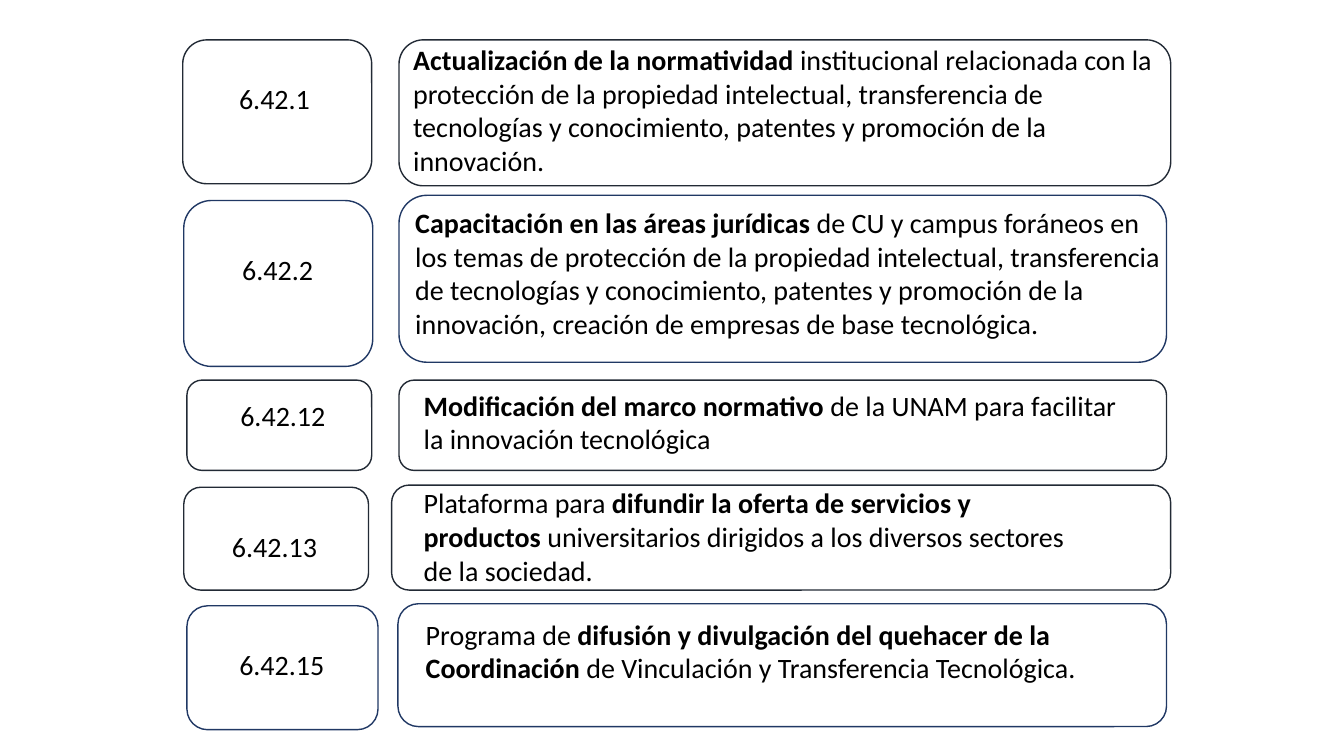
"""Slide of five numbered actions, each a code box beside a description box."""
from pptx import Presentation
from pptx.dml.color import RGBColor
from pptx.enum import shapes, text
from pptx.util import Pt

PX = 9525
INK = {"dark": "222A35", "navy": "203864", "text": "000000"}

deck = Presentation()
deck.slide_width, deck.slide_height = 1280 * PX, 720 * PX
slide = deck.slides.add_slide(deck.slide_layouts[6])


def frame(area, tone):
    box = slide.shapes.add_shape(shapes.MSO_SHAPE.ROUNDED_RECTANGLE, *[n * PX for n in area])
    box.shadow.inherit = False
    box.fill.background()
    box.line.color.rgb = RGBColor.from_string(INK[tone])
    box.line.width = Pt(1)


def write(area, words, align, wrap):
    body = slide.shapes.add_textbox(*[n * PX for n in area]).text_frame
    body.word_wrap = wrap
    body.auto_size = text.MSO_AUTO_SIZE.SHAPE_TO_FIT_TEXT
    para = body.paragraphs[0]
    para.alignment = align
    para.font.name, para.font.size = "Calibri", Pt(20)
    para.font.color.rgb = RGBColor.from_string(INK["text"])
    for i, part in enumerate(words.split("*")):
        if part:
            run = para.add_run()
            run.text = part
            run.font.bold = i % 2 == 1


rows = [
    ("dark", "6.42.1", (174, 38, 180, 137), (218, 73, 87, 42),
     (380, 38, 735, 139), (384, 36, 748, 139),
     "*Actualización de la normatividad *institucional relacionada con la protección de la "
     "propiedad intelectual, transferencia de tecnologías y conocimiento, patentes y "
     "promoción de la innovación."),
    ("navy", "6.42.2", (175, 191, 180, 158), (221, 236, 87, 42),
     (380, 186, 731, 159), (386, 191, 739, 139),
     "*Capacitación en las áreas jurídicas *de CU y campus foráneos en los temas de "
     "protección de la propiedad intelectual, transferencia de tecnologías y conocimiento, "
     "patentes y promoción de la innovación, creación de empresas de base tecnológica."),
    ("dark", "6.42.12", (178, 362, 176, 86), (219, 375, 101, 42),
     (380, 362, 731, 86), (394, 365, 700, 74),
     "*Modificación del marco normativo *de la UNAM para facilitar la innovación tecnológica"),
    ("dark", "6.42.13", (175, 464, 176, 98), (211, 500, 101, 42),
     (373, 462, 742, 100), (394, 458, 640, 107),
     "Plataforma para *difundir la oferta de servicios y productos *universitarios dirigidos "
     "a los diversos sectores de la sociedad."),
    ("navy", "6.42.15", (178, 577, 182, 118), (217, 612, 103, 42),
     (379, 575, 732, 117), (396, 583, 649, 74),
     "Programa de *difusión y divulgación del quehacer de la Coordinación* de Vinculación y "
     "Transferencia Tecnológica."),
]

for tone, code, left, label, right, area, words in rows:
    frame(left, tone)
    write(label, code, text.PP_ALIGN.CENTER, False)
    frame(right, tone)
    write(area, words, text.PP_ALIGN.LEFT, True)

deck.save("out.pptx")
